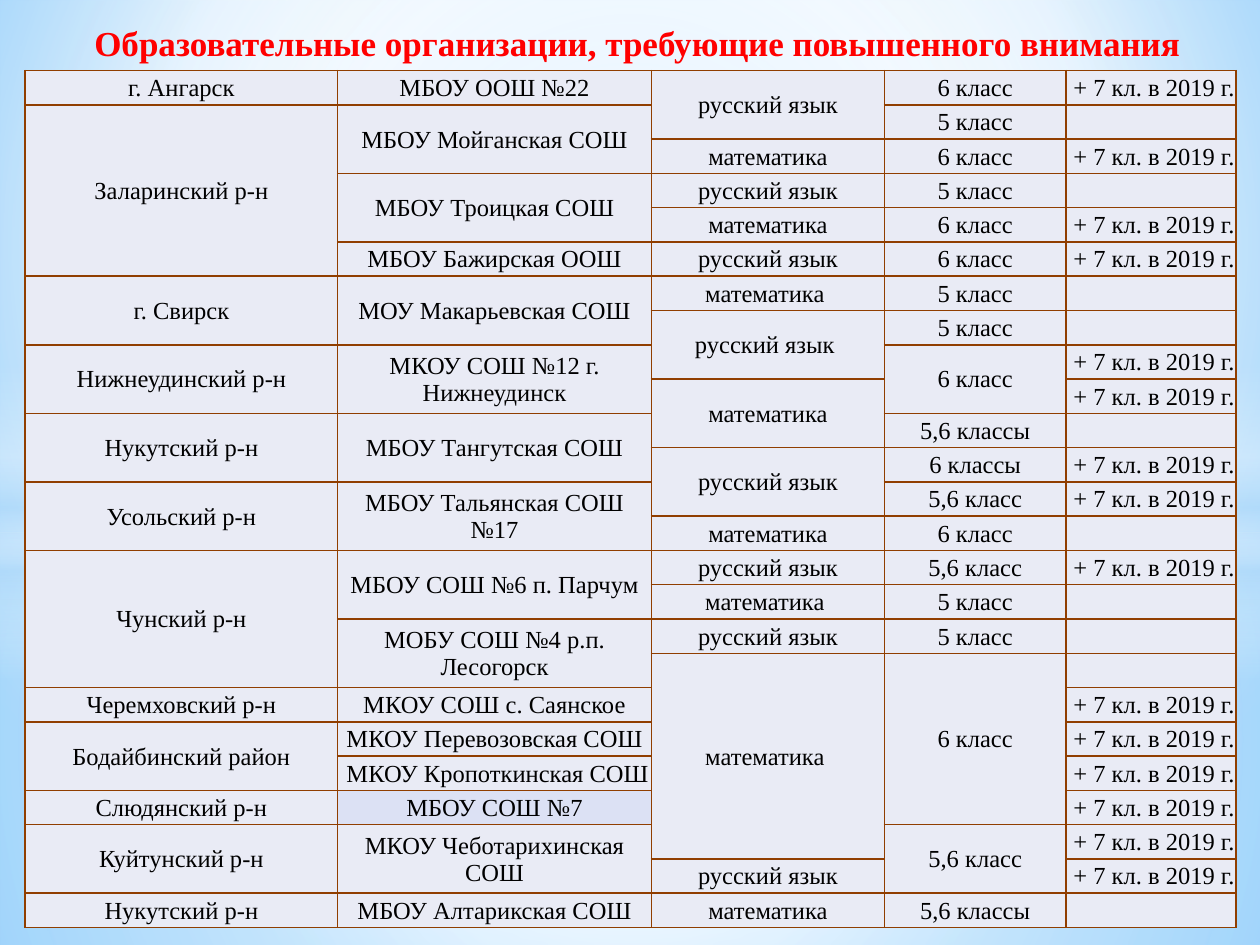
from pptx import Presentation
from pptx.dml.color import RGBColor
from pptx.enum.shapes import MSO_SHAPE
from pptx.enum.text import MSO_ANCHOR, PP_ALIGN
from pptx.oxml import parse_xml
from pptx.oxml.ns import nsdecls, qn
from pptx.util import Inches, Pt

RECT, OVAL = MSO_SHAPE.RECTANGLE, MSO_SHAPE.OVAL
MIDDLE, CENTER = MSO_ANCHOR.MIDDLE, PP_ALIGN.CENTER
FONT = "Times New Roman"
EDGE, PALE, BLUE = "903E00", "E9EBF5", "DCE1F4"


def color(code):
    return RGBColor.from_string(code)


def write(frame, text, size=14, tint="000000", bold=False):
    par = frame.paragraphs[0]
    par.alignment = CENTER
    if text:
        run = par.add_run()
        run.text = text
        run.font.name, run.font.size, run.font.bold = FONT, Pt(size), bold
        run.font.color.rgb = color(tint)
    # An empty cell keeps the height of its row through the end mark
    par._p.get_or_add_endParaRPr().set("sz", str(size * 100))


prs = Presentation()
prs.slide_width, prs.slide_height = Inches(10), Inches(7.5)
slide = prs.slides.add_slide(prs.slide_layouts[5])

# Backdrop: preset, box, stops (position, colour, opacity), focus or None
MID = (50, 50, 50, 50)
layers = [
    (None, None, [(0, "9ED5FF", 100), (60, "FFFFFF", 100),
                  (100, "5BB9FF", 100)], (20, 10, 20, 60)),
    (RECT, (0, 4.23, 10, 3.27), [(0, "FFFFFF", 91), (37, "FFFFFF", 76),
                                 (100, "B4DCFA", 79)], MID),
    (RECT, (0, 0, 10, 4.23), [(0, "FFFFFF", 89), (48, "FFFFFF", 62),
                              (100, "B4DCFA", 79)], MID),
    (RECT, (0, 2.9, 10, 2.5), [(0, "FFFFFF", 0), (29, "FFFFFF", 30),
                               (45, "B4DCFA", 40), (55, "FFFFFF", 26),
                               (65, "B4DCFA", 60), (100, "FFFFFF", 0)], None),
    (OVAL, (0, 1.75, 10, 5.58), [(0, "FFFFFF", 100), (54, "FFFFFF", 0)], MID),
]
for kind, box, stops, focus in layers:
    if kind is None:
        slide.background.fill.gradient()
        root = slide._element
    else:
        shape = slide.shapes.add_shape(kind, *map(Inches, box))
        shape.shadow.inherit = False
        shape.line.fill.background()
        shape.fill.gradient()
        root = shape._element
    marks = "".join(
        f'<a:gs pos="{pos * 1000}"><a:srgbClr val="{code}">'
        f'<a:alpha val="{alpha * 1000}"/></a:srgbClr></a:gs>'
        for pos, code, alpha in stops)
    if focus:
        sides = " ".join(f'{side}="{part * 1000}"'
                         for side, part in zip("ltrb", focus))
        course = f'<a:path path="circle"><a:fillToRect {sides}/></a:path>'
    else:
        course = '<a:lin ang="5400000" scaled="0"/>'
    old = root.find(".//" + qn("a:gradFill"))
    old.getparent().replace(old, parse_xml(
        f'<a:gradFill {nsdecls("a")} rotWithShape="1">'
        f'<a:gsLst>{marks}</a:gsLst>{course}</a:gradFill>'))

# Table columns: width, side margin and entries (text, rows covered)
RUS, MATH = "русский язык", "математика"
G5, G6, G56 = "5 класс", "6 класс", "5,6 класс"
ROWS = 25
again = {0, 2, 4, 5, 8, 9, 11, 12, 14, *range(18, 24)}
columns = [
    (2.48, 0.01, [
        ("г. Ангарск", 1), ("Заларинский р-н", 5), ("г. Свирск", 2),
        ("Нижнеудинский р-н", 2), ("Нукутский р-н", 2),
        ("Усольский р-н", 2), ("Чунский р-н", 4),
        ("Черемховский р-н", 1), ("Бодайбинский район", 2),
        ("Слюдянский р-н", 1), ("Куйтунский р-н", 2),
        ("Нукутский р-н", 1)]),
    (2.49, 0.01, [
        ("МБОУ ООШ №22", 1), ("МБОУ Мойганская СОШ", 2),
        ("МБОУ Троицкая СОШ", 2), ("МБОУ Бажирская ООШ", 1),
        ("МОУ Макарьевская СОШ", 2), ("МКОУ СОШ №12 г. Нижнеудинск", 2),
        ("МБОУ Тангутская СОШ", 2), ("МБОУ Тальянская СОШ №17", 2),
        ("МБОУ СОШ №6 п. Парчум", 2), ("МОБУ СОШ №4 р.п. Лесогорск", 2),
        ("МКОУ СОШ с. Саянское", 1), (" МКОУ Перевозовская СОШ ", 1),
        (" МКОУ Кропоткинская СОШ ", 1), ("МБОУ СОШ №7", 1),
        ("МКОУ Чеботарихинская СОШ", 2), ("МБОУ Алтарикская СОШ", 1)]),
    (1.85, 0.01, [
        (RUS, 2), (MATH, 1), (RUS, 1), (MATH, 1), (RUS, 1),
        (MATH + " ", 1), (RUS + " ", 2), (MATH, 2), (RUS, 2), (MATH, 1),
        (RUS, 1), (MATH + " ", 1), (RUS, 1), (MATH + " ", 6), (RUS, 1),
        (MATH, 1)]),
    (1.44, 0.01, [
        (G6, 1), (G5, 1), (G6, 1), (G5, 1), (G6, 1), (G6, 1), (G5, 1),
        (G5, 1), (G6, 2), (G56 + "ы", 1), (G6 + "ы", 1), (G56, 1),
        (G6, 1), (G56, 1), (G5, 1), (G5, 1), (G6, 5), (G56, 2),
        (G56 + "ы", 1)]),
    (1.35, 0, [(" + 7 кл. в 2019 г." if row in again else "", 1)
               for row in range(ROWS)]),
]
table = slide.shapes.add_table(ROWS, len(columns), Inches(0.2), Inches(0.56),
                               Inches(9.61), Inches(6.81)).table
table.first_row = table.horz_banding = False
for line in table.rows:
    line.height = Inches(6.81 / ROWS)

for col, (width, inset, items) in enumerate(columns):
    table.columns[col].width = Inches(width)
    row = 0
    for text, span in items:
        for step in range(span):
            cell = table.cell(row + step, col)
            cell.margin_left = cell.margin_right = Inches(inset)
            cell.margin_top, cell.margin_bottom = Inches(0.01), 0
            cell.vertical_anchor = MIDDLE
            write(cell.text_frame, "" if step else text)
            props = cell._tc.get_or_add_tcPr()
            for side in ("lnL", "lnR", "lnT", "lnB"):
                props.append(parse_xml(
                    f'<a:{side} {nsdecls("a")} w="{Pt(1)}"><a:solidFill>'
                    f'<a:srgbClr val="{EDGE}"/></a:solidFill></a:{side}>'))
            cell.fill.solid()
            cell.fill.fore_color.rgb = color(
                BLUE if text == "МБОУ СОШ №7" else PALE)
        if span > 1:
            table.cell(row, col).merge(table.cell(row + span - 1, col))
        row += span

# The title lies in front of the backdrop
title = slide.shapes.title
title.left, title.top = Inches(0.35), Inches(0.12)
title.width, title.height = Inches(9.37), Inches(0.44)
frame = title.text_frame
frame.word_wrap = True
frame.vertical_anchor = MIDDLE
frame.margin_left = Inches(0.15)
write(frame, "Образовательные организации, требующие повышенного внимания",
      size=20, tint="FF0000", bold=True)
slide.shapes._spTree.append(title._element)

prs.save("out.pptx")
